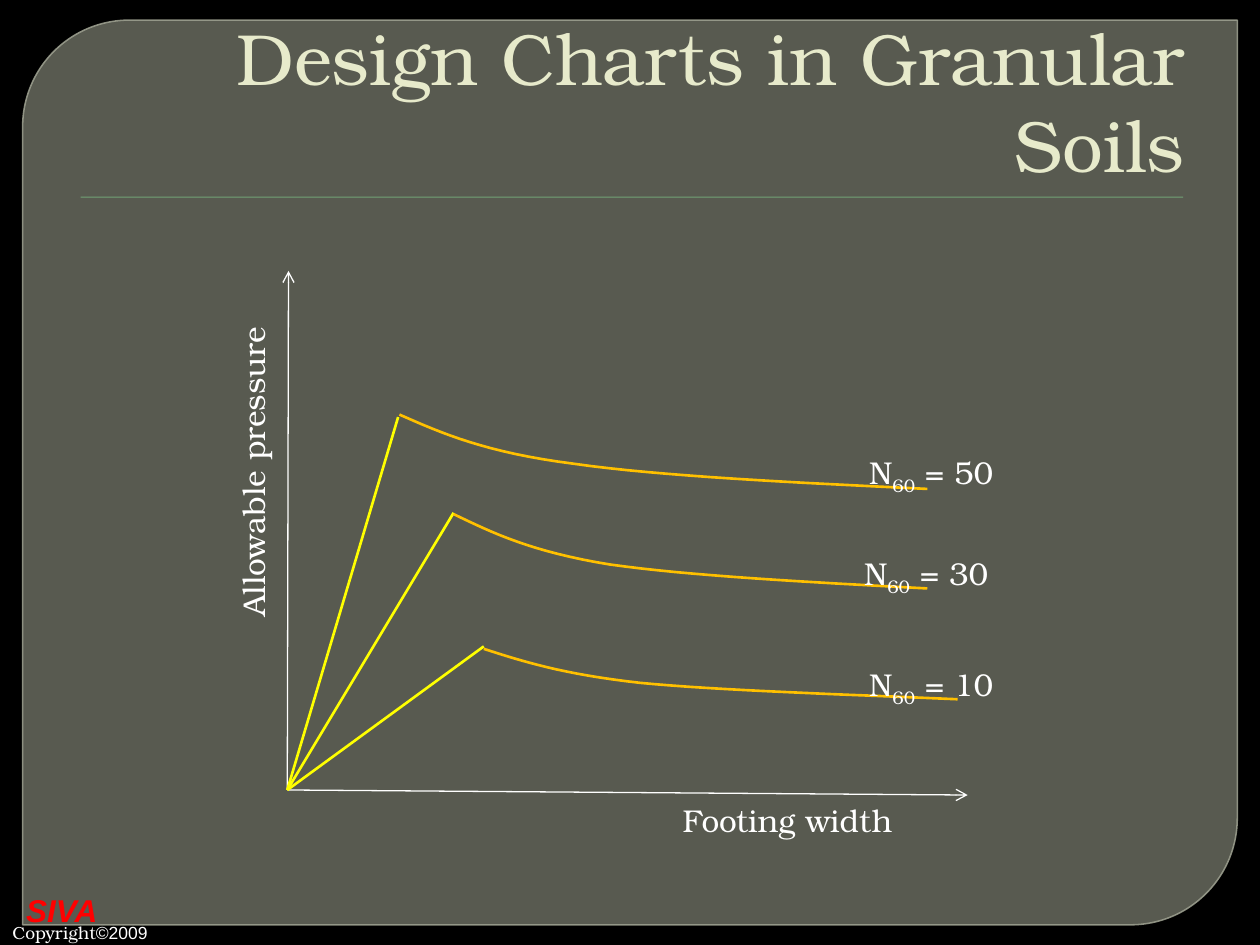
from lxml.etree import SubElement
from pptx import Presentation
from pptx.dml.color import RGBColor
from pptx.enum.shapes import MSO_CONNECTOR as Connector, MSO_SHAPE as Shape
from pptx.enum.text import MSO_ANCHOR as Anchor, MSO_AUTO_SIZE as AutoSize, PP_ALIGN as Align
from pptx.oxml.ns import qn
from pptx.util import Inches, Pt

COLORS = {
    "background": "000000", "panel": "888B7B", "panel_line": "9DA090",
    "rule": "72A376", "title": "E7EACB", "text": "FFFFFF", "author": "FF0000",
    "rise": "FFFF00", "curve": "FFC000",
}
ORIGIN = (2.28, 6.27)
CURVES = [
    (50, (3.16, 3.31), (6.8, 3.55),
     [(3.17, 3.29), (3.51, 3.44), (3.85, 3.59), (4.55, 3.68),
      (5.25, 3.78), (6.31, 3.83), (7.36, 3.88)]),
    (30, (3.6, 4.07), (6.76, 4.35),
     [(3.6, 4.08), (3.91, 4.23), (4.22, 4.38), (4.84, 4.48),
      (5.47, 4.57), (6.41, 4.62), (7.36, 4.67)]),
    (10, (3.84, 5.13), (6.8, 5.23),
     [(3.84, 5.15), (4.15, 5.25), (4.46, 5.35), (5.08, 5.42),
      (5.71, 5.48), (6.65, 5.51), (7.6, 5.55)]),
]


def bezier_points(controls, steps=16):
    """Return points along a chain of cubic Bezier segments."""
    points = [controls[0]]
    for start in range(0, len(controls) - 1, 3):
        segment = controls[start:start + 4]
        for step in range(1, steps + 1):
            t = step / steps
            weights = ((1 - t) ** 3, 3 * t * (1 - t) ** 2, 3 * t * t * (1 - t), t ** 3)
            points.append(tuple(sum(w * point[axis] for w, point in zip(weights, segment))
                                for axis in (0, 1)))
    return points


class SlideBuilder:
    """Hold the text style and the current slide, and add elements to it."""

    def __init__(self, slide, font="TeX Gyre Bonum", size=18):
        self.slide = slide
        self.font = font
        self.size = size

    def color(self, name):
        return RGBColor.from_string(COLORS[name])

    def background(self, name):
        fill = self.slide.background.fill
        fill.solid()
        fill.fore_color.rgb = self.color(name)

    def set_alpha(self, fill, percent):
        for color in fill._xPr.iter(qn("a:srgbClr")):
            SubElement(color, qn("a:alpha")).set("val", str(percent * 1000))

    def shape(self, kind, box, fill, line=None, fill_alpha=None, line_alpha=None):
        shape = self.slide.shapes.add_shape(kind, *map(Inches, box))
        shape.shadow.inherit = False
        shape.fill.solid()
        shape.fill.fore_color.rgb = self.color(fill)
        if fill_alpha:
            self.set_alpha(shape.fill, fill_alpha)
        if line:
            shape.line.color.rgb = self.color(line)
            shape.line.width = Pt(0.87)
            if line_alpha:
                self.set_alpha(shape.line.fill, line_alpha)
        else:
            shape.line.fill.background()
        return shape

    def run(self, paragraph, text, color="text", size=None, font=None, baseline=0):
        run = paragraph.add_run()
        run.text = text
        run.font.name = font or self.font
        run.font.size = Pt(size or self.size)
        run.font.color.rgb = self.color(color)
        if baseline:
            run._r.get_or_add_rPr().set("baseline", str(baseline * 1000))
        return run

    def text_box(self, box, rotation=0, wrap=False):
        shape = self.slide.shapes.add_textbox(*map(Inches, box))
        shape.rotation = rotation
        frame = shape.text_frame
        frame.word_wrap = wrap
        frame.auto_size = AutoSize.NONE if wrap else AutoSize.SHAPE_TO_FIT_TEXT
        return frame

    def line(self, start, end, color, width, arrow=False):
        line = self.slide.shapes.add_connector(
            Connector.STRAIGHT, *map(Inches, (*start, *end)))
        line.line.color.rgb = self.color(color)
        line.line.width = Pt(width)
        if arrow:
            SubElement(line.line._get_or_add_ln(), qn("a:tailEnd")).set("type", "arrow")
        SubElement(line._element.spPr, qn("a:effectLst"))

    def curve(self, controls, color, width):
        points = [(Inches(x), Inches(y)) for x, y in bezier_points(controls)]
        builder = self.slide.shapes.build_freeform(*points[0])
        builder.add_line_segments(points[1:], close=False)
        shape = builder.convert_to_shape()
        shape.shadow.inherit = False
        shape.fill.background()
        shape.line.color.rgb = self.color(color)
        shape.line.width = Pt(width)


def main():
    presentation = Presentation()
    presentation.slide_width, presentation.slide_height = Inches(10), Inches(7.5)
    builder = SlideBuilder(presentation.slides.add_slide(presentation.slide_layouts[6]))

    builder.background("background")
    panel = builder.shape(Shape.ROUND_2_DIAG_RECTANGLE, (0.18, 0.16, 9.64, 7.18),
                          "panel", "panel_line", 65, 88)
    panel.adjustments[0], panel.adjustments[1] = 0.118, 0

    author = builder.text_box((0.11, 7.02, 0.78, 0.4)).paragraphs[0]
    author_run = builder.run(author, "SIVA", "author", font="Arial")
    author_run.font.bold = author_run.font.italic = True
    copyright_line = builder.text_box((0, 7.27, 1.32, 0.27)).paragraphs[0]
    builder.run(copyright_line, "Copyright", size=10)
    builder.run(copyright_line, "©2009", size=10, font="Arial")

    builder.shape(Shape.RECTANGLE, (0.64, 1.56, 8.75, 0.01), "rule")
    title = builder.text_box((0.5, 0.28, 9, 1.25), wrap=True)
    title.vertical_anchor = Anchor.BOTTOM
    title.paragraphs[0].alignment = Align.RIGHT
    builder.run(title.paragraphs[0], "Design Charts in Granular Soils", "title", 41.4)

    for end in ((7.68, 6.31), (2.29, 2.15)):
        builder.line(ORIGIN, end, "text", 0.75, arrow=True)
    for text, box, rotation in (("Footing width", (5.32, 6.31, 2.16, 0.4), 0),
                                ("Allowable pressure", (0.73, 3.51, 2.56, 0.4), 270)):
        builder.run(builder.text_box(box, rotation).paragraphs[0], text)

    for blow_count, peak, label_corner, controls in CURVES:
        builder.line(ORIGIN, peak, "rise", 1.5)
        builder.curve(controls, "curve", 1.5)
        label = builder.text_box((*label_corner, 1.24, 0.4)).paragraphs[0]
        builder.run(label, "N")
        builder.run(label, "60", baseline=-25)
        builder.run(label, f" = {blow_count}")

    presentation.save("out.pptx")


if __name__ == "__main__":
    main()
